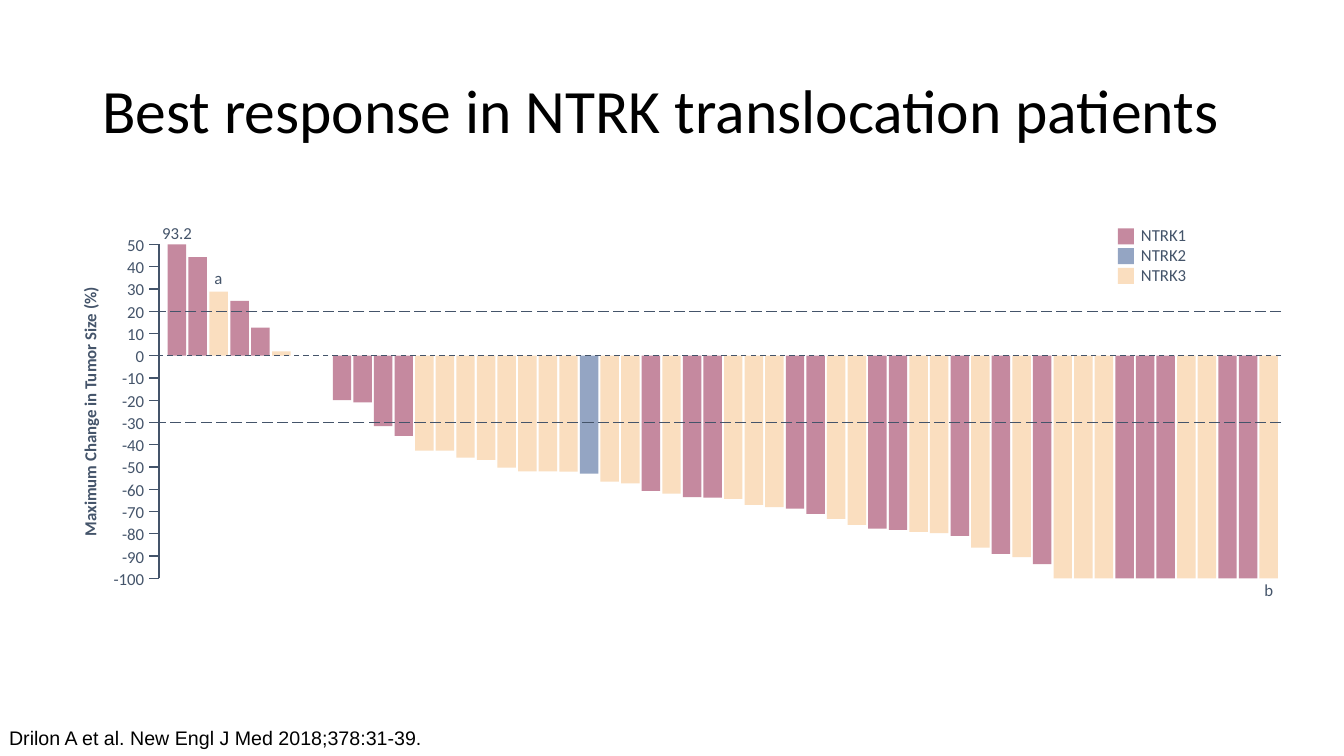
from lxml import etree
from pptx import Presentation
from pptx.dml.color import RGBColor
from pptx.enum.dml import MSO_LINE
from pptx.enum.shapes import MSO_CONNECTOR, MSO_SHAPE
from pptx.enum.text import MSO_ANCHOR, MSO_AUTO_SIZE, PP_ALIGN
from pptx.oxml.ns import qn
from pptx.util import Pt

RECT = MSO_SHAPE.RECTANGLE
STRAIGHT = MSO_CONNECTOR.STRAIGHT
DASH, LONG_DASH = MSO_LINE.DASH, MSO_LINE.LONG_DASH
LEFT, CENTER, RIGHT = PP_ALIGN.LEFT, PP_ALIGN.CENTER, PP_ALIGN.RIGHT
TOP, MIDDLE, BOTTOM = MSO_ANCHOR.TOP, MSO_ANCHOR.MIDDLE, MSO_ANCHOR.BOTTOM

BLACK = RGBColor(0x00, 0x00, 0x00)
SLATE = RGBColor(0x44, 0x54, 0x6A)
ROSE = RGBColor(0xC5, 0x89, 0x9F)
BLUE = RGBColor(0x94, 0xA5, 0xC3)
PEACH = RGBColor(0xFA, 0xDE, 0xBF)
GENE_COLORS = {"NTRK1": ROSE, "NTRK2": BLUE, "NTRK3": PEACH}

AXIS_X, AXIS_RIGHT = 113.5, 915.1
ZERO_Y = 254.1
PT_PER_PERCENT = 1.59
BAR_WIDTH = 13.2
LABEL_W, WIDE_LABEL_W, LABEL_H = 18, 32, 13.6

# Percent change per patient; the first bar is cut off at the top of the axis.
GROWTH = [50, 44.3, 28.8, 24.6, 12.6, 2]
GROWTH_GENES = "113113"
SHRINKAGE = [
    -20, -21, -31.7, -36, -42.7, -42.7, -45.8, -46.8, -50.3, -52, -52, -52.1,
    -53, -56.6, -57.4, -60.7, -62, -63.5, -63.8, -64.3, -67, -68, -68.7, -71,
    -73.3, -76, -77.7, -78.3, -79.2, -79.7, -81, -86.2, -89, -90.5, -93.7,
] + [-100] * 11
SHRINKAGE_GENES = "1111333333332331311333113311331313133311133113"


def y_of(percent):
    return ZERO_Y - percent * PT_PER_PERCENT


def add_text(slide, box, lines, size=12, font="Calibri", color=SLATE, bold=False,
             align=LEFT, anchor=MIDDLE, wrap=False, inset=(0, 0)):
    s = slide.shapes.add_textbox(*map(Pt, box))
    tf = s.text_frame
    tf.word_wrap = wrap
    tf.vertical_anchor = anchor
    tf.margin_left = tf.margin_right = Pt(inset[0])
    tf.margin_top = tf.margin_bottom = Pt(inset[1])
    for i, line in enumerate(lines):
        p = tf.add_paragraph() if i else tf.paragraphs[0]
        p.alignment = align
        r = p.add_run()
        r.text = line
        r.font.size = Pt(size)
        r.font.name = font
        r.font.bold = bold
        r.font.color.rgb = color
    return s


def add_label(slide, x, center_y, text, align=CENTER):
    """Place a short label whose centre, or right edge if right-aligned, is at x."""
    width = WIDE_LABEL_W if len(text) > 3 else LABEL_W
    left = x - width if align == RIGHT else x - width / 2
    add_text(slide, (left, center_y - LABEL_H / 2, width, LABEL_H), [text], align=align)


def add_rect(slide, x, y, w, h, color):
    s = slide.shapes.add_shape(RECT, Pt(x), Pt(y), Pt(w), Pt(h))
    s.shadow.inherit = False
    s.fill.solid()
    s.fill.fore_color.rgb = color
    s.line.fill.background()


def add_line(slide, x1, y1, x2, y2, dash=None):
    c = slide.shapes.add_connector(STRAIGHT, Pt(x1), Pt(y1), Pt(x2), Pt(y2))
    c.line.color.rgb = SLATE
    c.line.width = Pt(1)
    if dash:
        c.line.dash_style = dash
    etree.SubElement(c._element.spPr, qn("a:effectLst"))


def add_axis(slide):
    add_line(slide, AXIS_X, y_of(50), AXIS_X, y_of(-100))
    for percent in range(50, -101, -10):
        y = y_of(percent)
        add_line(slide, AXIS_X, y, AXIS_X - 7.2, y)
        add_label(slide, 103, y + 0.2, str(percent), RIGHT)
    title = add_text(slide, (-55.4, 287.3, 239, LABEL_H),
                     ["Maximum Change in Tumor Size (%)"], bold=True, align=CENTER)
    title.rotation = 270


def add_bars(slide, x, pitch, values, genes):
    for i, (value, gene) in enumerate(zip(values, genes)):
        add_rect(slide, x + i * pitch, y_of(max(value, 0)), BAR_WIDTH,
                 abs(value) * PT_PER_PERCENT, GENE_COLORS["NTRK" + gene])


def add_legend(slide):
    add_text(slide, (815, 160.6, 100.8, 29.5), list(GENE_COLORS), anchor=TOP)
    for i, color in enumerate(GENE_COLORS.values()):
        add_rect(slide, 798.5, 163.2 + i * 14.1, 11.4, 11.4, color)


def main():
    prs = Presentation()
    prs.slide_width, prs.slide_height = Pt(960), Pt(540)
    slide = prs.slides.add_slide(prs.slide_layouts[6])

    title = add_text(slide, (66, 28.75, 828, 104.4),
                     ["Best response in NTRK translocation patients"],
                     size=44, color=BLACK, wrap=True, inset=(7.2, 3.6))
    title.text_frame.paragraphs[0].line_spacing = 0.9

    add_axis(slide)
    add_bars(slide, 119.7, 14.95, GROWTH, GROWTH_GENES)
    add_bars(slide, 237.7, 14.71, SHRINKAGE, SHRINKAGE_GENES)
    add_label(slide, 126.5, 166.2, "93.2")
    add_label(slide, 156, 198.6, "a")
    add_label(slide, 906.2, 421, "b")
    for percent, dash in ((20, LONG_DASH), (-30, LONG_DASH), (0, DASH)):
        add_line(slide, AXIS_RIGHT, y_of(percent), AXIS_X, y_of(percent), dash)
    add_legend(slide)

    citation = add_text(slide, (-0.6, 515, 420, 24.2),
                        ["Drilon A et al. New Engl J Med 2018;378:31-39."], size=14,
                        font="Arial", color=BLACK, anchor=BOTTOM, wrap=True,
                        inset=(7.2, 3.6))
    citation.text_frame.auto_size = MSO_AUTO_SIZE.SHAPE_TO_FIT_TEXT
    prs.save("out.pptx")


if __name__ == "__main__":
    main()
